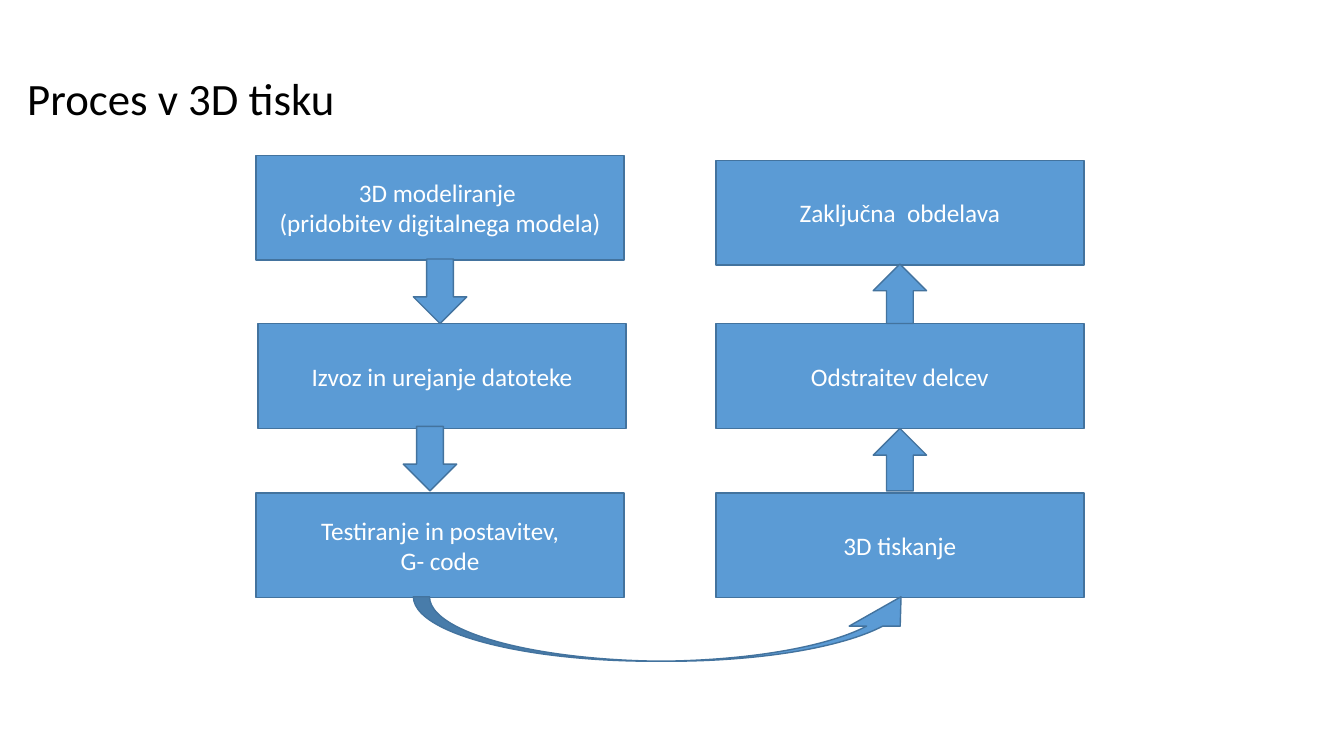
"""Build a slide that shows the steps of 3D printing as a flow of boxes."""
from pptx import Presentation
from pptx.dml.color import RGBColor
from pptx.enum import shapes, text
from pptx.util import Pt

TITLE = "Proces v 3D tisku"
STEPS = [
    (254, 154, ["3D modeliranje ", "(pridobitev digitalnega modela)"]),
    (256, 321, ["Izvoz in urejanje datoteke"]),
    (254, 489, ["Testiranje in postavitev,", "G- code"]),
    (710, 489, ["3D tiskanje"]),
    (710, 321, ["Odstraitev delcev"]),
    (710, 159, ["Zaključna  obdelava"]),
]
ARROWS = [
    (410, 257, 64, 0),
    (400, 423, 64, 0),
    (866, 425, 62, 180),
    (866, 262, 59, 180),
]
RETURN_ARROW = (410, 592, 509, 64)
RETURN_ADJUSTMENTS = (0.25, 0.791, 0.456)
COLORS = {"fill": "5B9BD5", "line": "43739E", "label": "FFFFFF", "title": "000000"}
FONT = "Calibri"
BOX_W, BOX_H, ARROW_W = 365, 104, 53
PX = 9144


def emu(*lengths):
    return [length * PX for length in lengths]


def rgb(name):
    return RGBColor.from_string(COLORS[name])


def write(tf, lines, size, color, align, anchor, spacing=None):
    tf.word_wrap = True
    tf.auto_size = text.MSO_AUTO_SIZE.NONE
    tf.vertical_anchor = anchor
    for i, line in enumerate(lines):
        p = tf.paragraphs[0] if i == 0 else tf.add_paragraph()
        p.alignment = align
        p.line_spacing = spacing
        r = p.add_run()
        r.text = line
        r.font.name = FONT
        r.font.size = Pt(size)
        r.font.color.rgb = rgb(color)


def add_block(s, kind, box):
    sp = s.shapes.add_shape(kind, *emu(*box))
    sp.shadow.inherit = False
    sp.fill.solid()
    sp.fill.fore_color.rgb = rgb("fill")
    sp.line.color.rgb = rgb("line")
    sp.line.width = Pt(1)
    return sp


def main():
    prs = Presentation()
    prs.slide_width, prs.slide_height = emu(1333, 750)
    s = prs.slides.add_slide(prs.slide_layouts[5])

    title = s.shapes.title
    title.left, title.top, title.width, title.height = emu(17, 17, 1299, 112)
    write(title.text_frame, [TITLE], 32, "title", text.PP_ALIGN.LEFT,
          text.MSO_ANCHOR.BOTTOM, spacing=0.9)

    for left, top, lines in STEPS:
        sp = add_block(s, shapes.MSO_SHAPE.RECTANGLE, (left, top, BOX_W, BOX_H))
        write(sp.text_frame, lines, 18, "label", text.PP_ALIGN.CENTER,
              text.MSO_ANCHOR.MIDDLE)

    for left, top, height, angle in ARROWS:
        sp = add_block(s, shapes.MSO_SHAPE.DOWN_ARROW, (left, top, ARROW_W, height))
        sp.rotation = angle

    sp = add_block(s, shapes.MSO_SHAPE.CURVED_UP_ARROW, RETURN_ARROW)
    for i, value in enumerate(RETURN_ADJUSTMENTS):
        sp.adjustments[i] = value

    prs.save("out.pptx")


if __name__ == "__main__":
    main()
